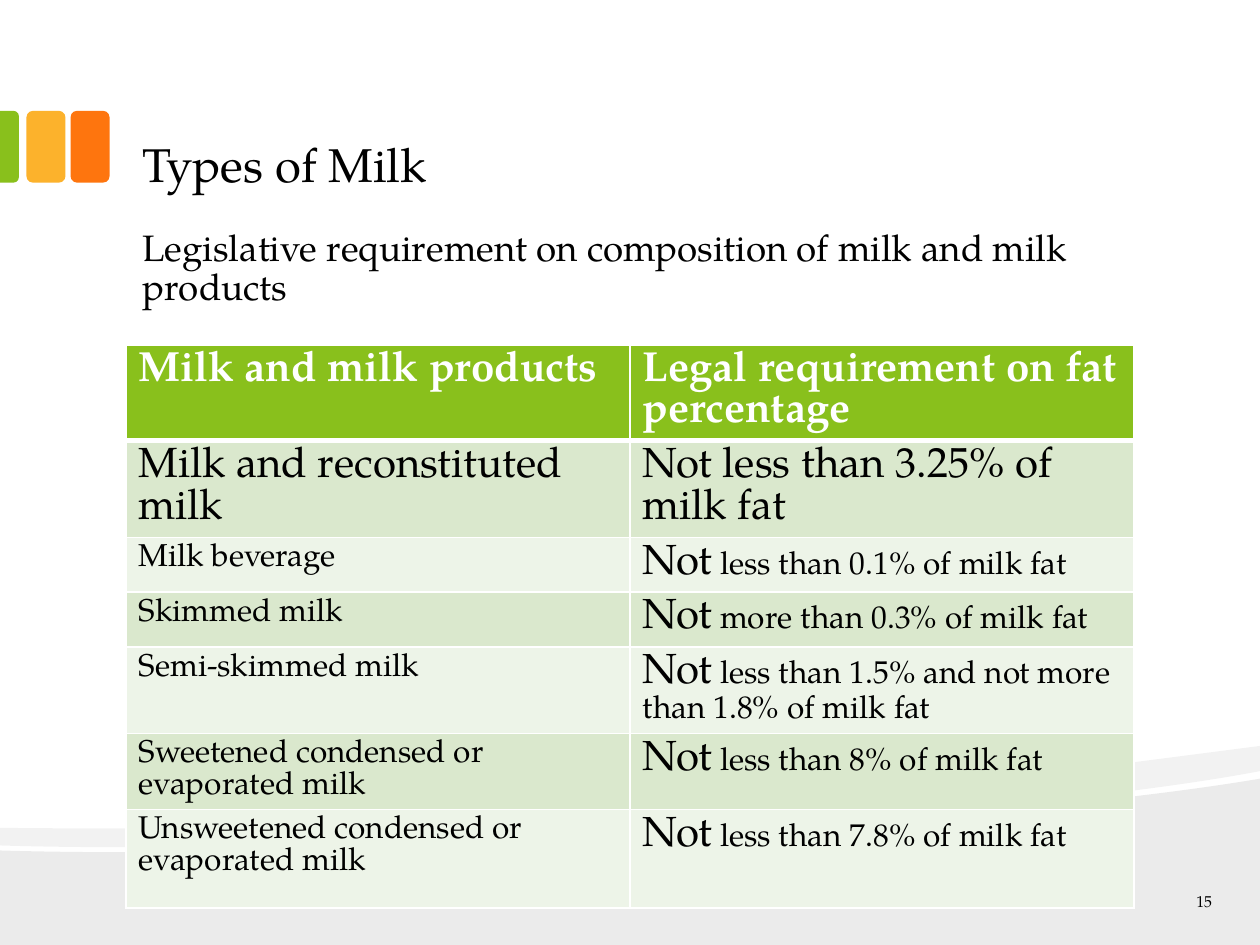
from dataclasses import dataclass
from typing import NamedTuple

from lxml import etree
from pptx import Presentation
from pptx import util as u
from pptx.dml.color import RGBColor
from pptx.enum import shapes, text
from pptx.oxml.ns import qn


@dataclass(frozen=True)
class Theme:
    font: str = "TeX Gyre Pagella"
    black: str = "000000"
    white: str = "FFFFFF"
    green: str = "89C01C"
    yellow: str = "FCB22C"
    orange: str = "FE750E"
    band_dark: str = "DAE8CD"
    band_light: str = "EDF4E8"
    title: float = 27
    body: float = 21
    large: float = 24
    small: float = 18
    number: float = 9


class Tab(NamedTuple):
    left: float
    top: float
    width: float
    height: float
    color: str
    preset: shapes.MSO_SHAPE = shapes.MSO_SHAPE.ROUNDED_RECTANGLE
    rotation: float = 0


class Wave(NamedTuple):
    start: tuple
    segments: list  # one point is a line, three points are a cubic curve
    opacity: int


class Row(NamedTuple):
    height: float  # least height; longer text makes the row grow
    product: str
    lead: str  # the part of the requirement in large type
    rest: str = ""
    product_size: float = 18


THEME = Theme()

WAVES = [
    Wave((10, 6.18), [[(10, 7.5)], [(0, 7.5)], [(0, 6.75)],
                      [(2.64, 6.83), (7.82, 6.55), (10, 6.18)]], 8),
    Wave((10, 5.92), [[(10, 6.12)],
                      [(9.42, 6.23), (8.62, 6.33), (7.72, 6.41)],
                      [(5.23, 6.63), (1.93, 6.77), (0, 6.71)],
                      [(0, 6.57)],
                      [(4.89, 6.62), (7.28, 6.27), (10, 5.92)]], 5),
]

TABS = [
    Tab(0.56, 0.88, 0.31, 0.57, THEME.orange),
    Tab(0.21, 0.88, 0.31, 0.57, THEME.yellow),
    Tab(-0.21, 1.09, 0.57, 0.15, THEME.green,
        shapes.MSO_SHAPE.ROUND_2_SAME_RECTANGLE, 90),
]

ROWS = [
    Row(0.6, "Milk and milk products", "Legal requirement on fat percentage",
        product_size=THEME.large),
    Row(0.6, "Milk and reconstituted milk", "Not less than 3.25% of milk fat",
        product_size=THEME.large),
    Row(0.42, "Milk beverage", "Not", " less than 0.1% of milk fat"),
    Row(0.42, "Skimmed milk", "Not", " more than 0.3% of milk fat"),
    Row(0.6, "Semi-skimmed milk", "Not",
        " less than 1.5% and not more than 1.8% of milk fat"),
    Row(0.6, "Sweetened condensed or evaporated milk", "Not",
        " less than 8% of milk fat"),
    Row(0.78, "Unsweetened condensed or evaporated milk", "Not",
        " less than 7.8% of milk fat"),
]


def write(paragraph, words: str, *, size: float, color: str = THEME.black,
          bold: bool = False, align=text.PP_ALIGN.LEFT) -> None:
    """Add one formatted run to a paragraph."""
    paragraph.alignment = align
    run = paragraph.add_run()
    run.text = words
    run.font.name = THEME.font
    run.font.size = u.Pt(size)
    run.font.bold = bold
    run.font.color.rgb = RGBColor.from_string(color)


def place(box, left: float, top: float, width: float, height: float, anchor):
    """Position a text holder and return its first paragraph."""
    box.left, box.top = u.Inches(left), u.Inches(top)
    box.width, box.height = u.Inches(width), u.Inches(height)
    frame = box.text_frame
    frame.word_wrap = True
    frame.auto_size = text.MSO_AUTO_SIZE.NONE
    frame.vertical_anchor = anchor
    frame.margin_left = frame.margin_right = u.Inches(0.13)
    frame.margin_top = frame.margin_bottom = u.Inches(0.07)
    return frame.paragraphs[0]


def paint(shape, color: str) -> None:
    shape.shadow.inherit = False
    shape.fill.solid()
    shape.fill.fore_color.rgb = RGBColor.from_string(color)
    shape.line.fill.background()


def draw_wave(slide, wave: Wave) -> None:
    """Outline through every point, with triples turned into cubic curves."""
    start, *others = [(u.Inches(x), u.Inches(y)) for x, y in
                      [wave.start, *(p for part in wave.segments for p in part)]]
    builder = slide.shapes.build_freeform(*start)
    builder.add_line_segments(others, close=True)
    shape = builder.convert_to_shape()
    lines = iter(list(shape._element.spPr.iter(qn("a:lnTo"))))
    for segment in wave.segments:
        first, *rest = [next(lines) for _ in segment]
        if rest:
            first.tag = qn("a:cubicBezTo")
            for line in rest:
                first.append(line[0])
                line.getparent().remove(line)
    paint(shape, THEME.black)
    tint = shape._element.spPr.find(qn("a:solidFill"))[0]
    etree.SubElement(tint, qn("a:alpha"), val=str(wave.opacity * 1000))


def draw_tab(slide, tab: Tab) -> None:
    shape = slide.shapes.add_shape(tab.preset, *map(u.Inches, tab[:4]))
    shape.rotation = tab.rotation
    if tab.rotation:
        shape.adjustments[0] = 0.29
    paint(shape, tab.color)


def style_cell(cell, fill: str, top: float, bottom: float) -> None:
    """White borders (widths in points), then the fill."""
    properties = cell._tc.get_or_add_tcPr()
    for side, width in (("L", 1), ("R", 1), ("T", top), ("B", bottom)):
        line = etree.SubElement(properties, qn(f"a:ln{side}"), w=str(u.Pt(width)))
        solid = etree.SubElement(line, qn("a:solidFill"))
        etree.SubElement(solid, qn("a:srgbClr"), val=THEME.white)
    cell.fill.solid()
    cell.fill.fore_color.rgb = RGBColor.from_string(fill)


def draw_requirements(slide, rows: list) -> None:
    height = sum(row.height for row in rows)
    table = slide.shapes.add_table(len(rows), 2, u.Inches(1), u.Inches(2.74),
                                   u.Inches(8), u.Inches(height)).table
    table.first_row = table.horz_banding = False
    for index, row in enumerate(rows):
        table.rows[index].height = u.Inches(row.height)
        header = index == 0
        band = THEME.band_dark if index % 2 else THEME.band_light
        look = dict(color=THEME.white if header else THEME.black, bold=header)
        product, requirement = table.rows[index].cells
        for cell in (product, requirement):
            style_cell(cell, THEME.green if header else band,
                       top=3 if index == 1 else 1, bottom=3 if header else 1)
        write(product.text_frame.paragraphs[0], row.product,
              size=row.product_size, **look)
        limit = requirement.text_frame.paragraphs[0]
        write(limit, row.lead, size=THEME.large, **look)
        if row.rest:
            write(limit, row.rest, size=THEME.small, **look)


def main() -> None:
    deck = Presentation()
    deck.slide_width, deck.slide_height = u.Inches(10), u.Inches(7.5)
    slide = deck.slides.add_slide(deck.slide_layouts[1])

    # Background waves and colour tabs
    for wave in WAVES:
        draw_wave(slide, wave)
    for tab in TABS:
        draw_tab(slide, tab)

    # Title and introduction
    heading = place(slide.shapes.title, 1, 0.17, 8, 1.42, text.MSO_ANCHOR.BOTTOM)
    write(heading, "Types of Milk", size=THEME.title)
    intro = place(slide.placeholders[1], 1, 1.75, 8, 5, text.MSO_ANCHOR.TOP)
    write(intro, "Legislative requirement on composition of milk and milk products",
          size=THEME.body)
    intro.line_spacing, intro.space_before = 0.9, u.Pt(13.5)
    layout = intro._p.get_or_add_pPr()
    layout.set("marL", "0")
    layout.set("indent", "0")
    etree.SubElement(layout, qn("a:buNone"))

    # Fat requirements and slide number
    draw_requirements(slide, ROWS)
    number = place(slide.shapes.add_textbox(0, 0, 0, 0), 9.08, 7.05, 0.67, 0.2,
                   text.MSO_ANCHOR.MIDDLE)
    write(number, "15", size=THEME.number, align=text.PP_ALIGN.RIGHT)
    deck.save("out.pptx")


if __name__ == "__main__":
    main()
